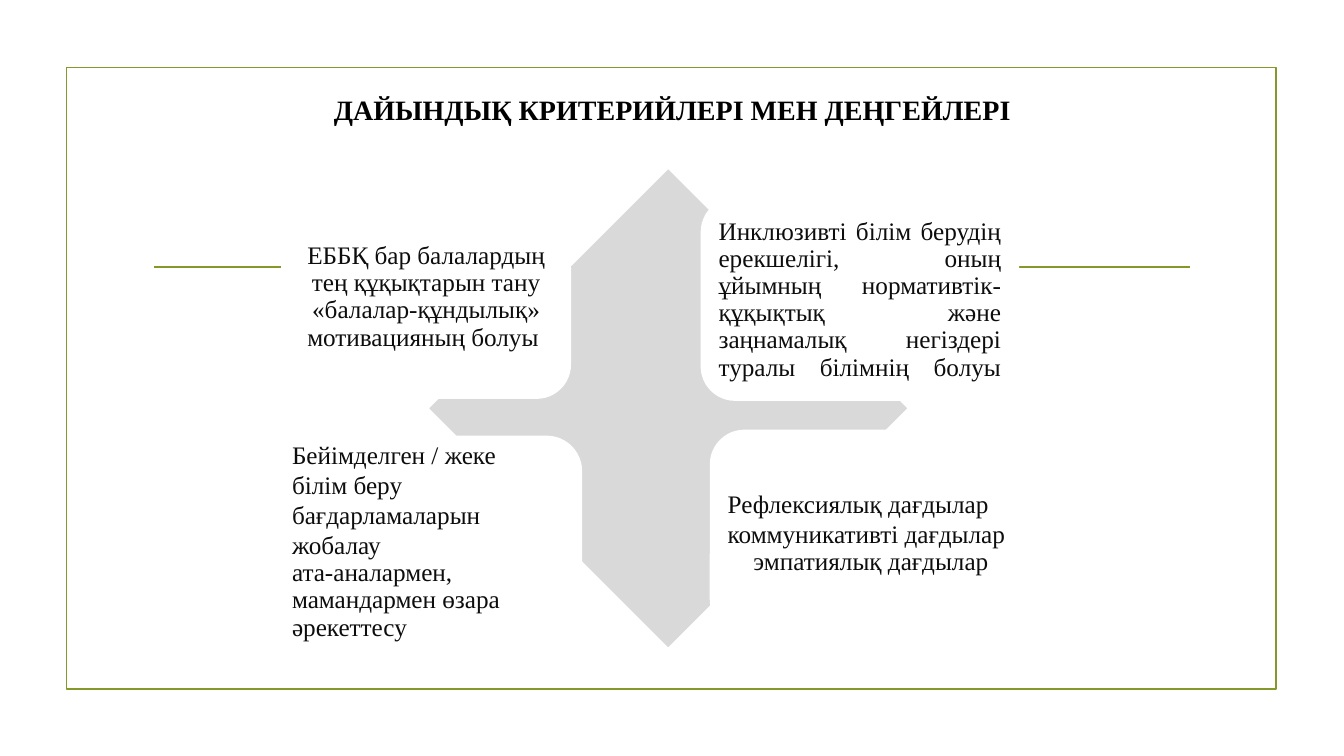
from pptx import Presentation
from pptx.dml.color import RGBColor
from pptx.enum.shapes import MSO_CONNECTOR as Link, MSO_SHAPE as Form
from pptx.enum.text import MSO_ANCHOR as Anchor, PP_ALIGN as Align
from pptx.oxml.xmlchemy import OxmlElement as Node
from pptx.util import Cm, Pt

GREEN = RGBColor(0x83, 0x99, 0x2A)
GRAY = RGBColor(0xD9, 0xD9, 0xD9)
WHITE = RGBColor(0xFF, 0xFF, 0xFF)
BLACK = RGBColor(0, 0, 0)
INK = RGBColor(0x0D, 0x0D, 0x0D)
FACE = "Times New Roman"

CARDS = [
    ((7.11, 4.95, 7.26, 5.08), 0, [
        ("ЕББҚ бар балалардың тең құқықтарын тану «балалар-құндылық»\v"
         "мотивацияның болуы ", Align.CENTER, 0.9)]),
    ((17.68, 5, 7.98, 5.08), 0.8, [
        ("Инклюзивті білім берудің ерекшелігі, оның ұйымның "
         "нормативтік-құқықтық және заңнамалық негіздері туралы "
         "білімнің болуы\v", Align.JUSTIFY, 0.9)]),
    ((6.93, 11, 7.72, 5.23), 0, [
        ("Бейімделген / жеке\vбілім беру бағдарламаларын жобалау",
         Align.LEFT, 1.0),
        ("ата-аналармен, мамандармен өзара әрекеттесу", Align.LEFT, 0.9)]),
    ((17.91, 10.85, 8.08, 5.11), 0, [
        ("Рефлексиялық дағдылар\vкоммуникативті дағдылар",
         Align.LEFT, 1.0),
        ("эмпатиялық дағдылар", Align.CENTER, 0.9)]),
]


def shape(slide, form, box, fill=None, edge=None):
    """Draw a preset shape with an optional fill and outline."""
    item = slide.shapes.add_shape(form, *map(Cm, box))
    item.shadow.inherit = False
    if fill is None:
        item.fill.background()
    else:
        item.fill.solid()
        item.fill.fore_color.rgb = fill
    if edge is None:
        item.line.fill.background()
    else:
        item.line.color.rgb = edge
        item.line.width = Pt(1.25)


def rule(slide, left, right, top):
    """Draw a green horizontal line."""
    line = slide.shapes.add_connector(
        Link.STRAIGHT, Cm(left), Cm(top), Cm(right), Cm(top))
    line.line.color.rgb = GREEN
    line.line.width = Pt(1.25)
    line._element.spPr.append(Node("a:effectLst"))


def text(slide, box, paras, size, color, bold=False):
    """Write paragraphs centred vertically in a box."""
    frame = slide.shapes.add_textbox(*map(Cm, box)).text_frame
    frame.word_wrap = True
    frame.vertical_anchor = Anchor.MIDDLE
    frame.margin_left = frame.margin_right = Cm(0.43)
    frame.margin_top = frame.margin_bottom = 0
    for n, (words, align, space) in enumerate(paras):
        para = frame.add_paragraph() if n else frame.paragraphs[0]
        para.text = words
        para.alignment = align
        para.line_spacing = space
        font = para.font
        font.name, font.size, font.bold = FACE, Pt(size), bold
        font.color.rgb = color


def card(slide, box, drop, paras):
    """Draw a white rounded card and its text."""
    shape(slide, Form.ROUNDED_RECTANGLE, box, WHITE, WHITE)
    left, top, width, height = box
    text(slide, (left, top, width, height + drop), paras, 18, INK)


def main():
    """Build the slide and save it."""
    deck = Presentation()
    deck.slide_width, deck.slide_height = Cm(33.87), Cm(19.05)
    slide = deck.slides.add_slide(deck.slide_layouts[6])
    shape(slide, Form.RECTANGLE, (1.68, 1.7, 30.48, 15.67), edge=GREEN)
    rule(slide, 3.89, 30, 6.73)
    title = ("ДАЙЫНДЫҚ КРИТЕРИЙЛЕРІ МЕН ДЕҢГЕЙЛЕРІ", Align.CENTER, 1.0)
    text(slide, (3.61, 1.88, 26.67, 1.73), [title], 20, BLACK, True)
    shape(slide, Form.DIAMOND, (10.82, 4.27, 12.04, 12.04), GRAY)
    for box, drop, paras in CARDS:
        card(slide, box, drop, paras)
    deck.save("out.pptx")


if __name__ == "__main__":
    main()
